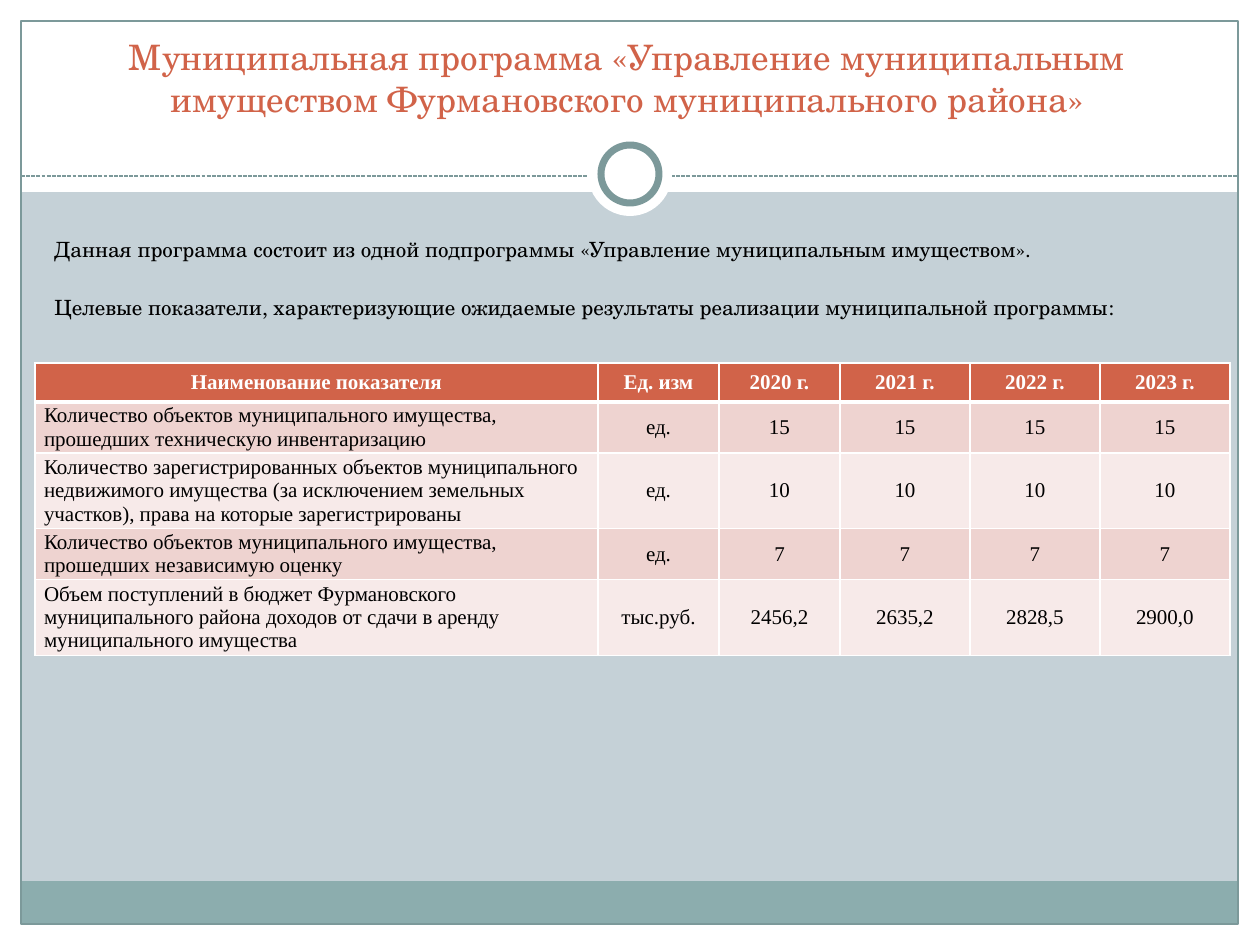
from dataclasses import dataclass

from lxml import etree
from pptx import Presentation
from pptx import util as u
from pptx.dml.color import RGBColor
from pptx.enum import dml, shapes, text
from pptx.oxml import ns

SCALE = 914400 / 126
WIDE, HIGH = 1260, 945
HUES = {
    "back": "C5D1D7",
    "white": "FFFFFF",
    "black": "000000",
    "foot": "8CADAE",
    "edge": "7C999A",
    "rust": "D16349",
    "rose": "EED3D0",
    "pale": "F7EAE9",
}
SCHOOL = "TeX Gyre Schola"
TIMES = "Times New Roman"
KIND = shapes.MSO_SHAPE


@dataclass
class Box:
    x: int
    y: int
    w: int
    h: int


@dataclass
class Form:
    kind: shapes.MSO_SHAPE
    box: Box
    fill: str = ""
    line: float = 0


@dataclass
class Font:
    name: str
    size: int
    hue: str
    bold: bool = False


FORMS = [
    Form(KIND.RECTANGLE, Box(0, 924, WIDE, 21), "white"),
    Form(KIND.RECTANGLE, Box(0, 0, WIDE, 192), "white"),
    Form(KIND.RECTANGLE, Box(0, 0, 21, HIGH), "white"),
    Form(KIND.RECTANGLE, Box(1239, 0, 21, HIGH), "white"),
    Form(KIND.RECTANGLE, Box(21, 881, 1217, 43), "foot"),
    Form(KIND.RECTANGLE, Box(21, 21, 1217, 903), line=0.75),
]
RINGS = [
    Form(KIND.OVAL, Box(588, 132, 84, 84), "white"),
    Form(KIND.OVAL, Box(601, 145, 58, 58), "white", 4),
]
TITLE = "Муниципальная программа «Управление муниципальным имуществом Фурмановского муниципального района»"
NOTES = [
    "Данная программа состоит из одной подпрограммы «Управление муниципальным имуществом».",
    "Целевые показатели, характеризующие ожидаемые результаты реализации муниципальной программы:",
]
COLS = [563, 121, 121, 130, 130, 130]
ROWS = [39, 51, 70, 51, 70]
DATA = [
    ["Наименование показателя", "Ед. изм"] + [f"{year} г." for year in range(2020, 2024)],
    ["Количество объектов муниципального имущества, прошедших техническую инвентаризацию", "ед."] + ["15"] * 4,
    ["Количество зарегистрированных объектов муниципального недвижимого имущества "
     "(за исключением земельных участков), права на которые зарегистрированы", "ед."] + ["10"] * 4,
    ["Количество объектов муниципального имущества, прошедших независимую оценку", "ед."] + ["7"] * 4,
    ["Объем поступлений в бюджет Фурмановского муниципального района доходов от сдачи в аренду "
     "муниципального имущества", "тыс.руб.", "2456,2", "2635,2", "2828,5", "2900,0"],
]


def px(val: int) -> u.Emu:
    return u.Emu(round(val * SCALE))


def place(box: Box) -> list[u.Emu]:
    return [px(val) for val in (box.x, box.y, box.w, box.h)]


def hue(key: str) -> RGBColor:
    return RGBColor.from_string(HUES[key])


def paint(fill, key: str) -> None:
    fill.solid()
    fill.fore_color.rgb = hue(key)


def draw(slide, form: Form) -> None:
    shape = slide.shapes.add_shape(form.kind, *place(form.box))
    shape.shadow.inherit = False
    if form.fill:
        paint(shape.fill, form.fill)
    else:
        shape.fill.background()
    if form.line:
        shape.line.color.rgb = hue("edge")
        shape.line.width = u.Pt(form.line)
    else:
        shape.line.fill.background()


def rule(slide, left: int, right: int, y: int) -> None:
    line = slide.shapes.add_connector(
        shapes.MSO_CONNECTOR.STRAIGHT, px(left), px(y), px(right), px(y))
    line.line.color.rgb = hue("edge")
    line.line.width = u.Pt(0.75)
    line.line.dash_style = dml.MSO_LINE.SQUARE_DOT
    etree.SubElement(line._element.spPr, ns.qn("a:effectLst"))


def write(para, words: str, font: Font, align: text.PP_ALIGN) -> None:
    para.alignment = align
    run = para.add_run()
    run.text = words
    run.font.name = font.name
    run.font.size = u.Pt(font.size)
    run.font.bold = font.bold
    run.font.color.rgb = hue(font.hue)


def frame(slide, box: Box, words: list[str], font: Font, align: text.PP_ALIGN,
          anchor: text.MSO_ANCHOR, top: int = 6, gap: int = 0) -> None:
    body = slide.shapes.add_textbox(*place(box)).text_frame
    body.word_wrap = True
    body.vertical_anchor = anchor
    body.margin_top = px(top)
    for i, part in enumerate(words):
        para = body.add_paragraph() if i else body.paragraphs[0]
        if i:
            para.space_before = u.Pt(gap)
        write(para, part, font, align)


def edge(cell, side: str, width: int) -> None:
    line = etree.SubElement(cell._tc.get_or_add_tcPr(), ns.qn(f"a:ln{side}"), w=str(u.Pt(width)))
    fill = etree.SubElement(line, ns.qn("a:solidFill"))
    etree.SubElement(fill, ns.qn("a:srgbClr"), val=HUES["white"])


def grid(slide, x: int, y: int) -> None:
    table = slide.shapes.add_table(
        len(ROWS), len(COLS), *place(Box(x, y, sum(COLS), sum(ROWS)))).table
    for col, wide in zip(table.columns, COLS):
        col.width = px(wide)
    for r, (row, high) in enumerate(zip(table.rows, ROWS)):
        row.height = px(high)
        font = Font(TIMES, 12, "black" if r else "white", not r)
        shade = ("pale", "rose")[r % 2] if r else "rust"
        for c, cell in enumerate(row.cells):
            for side in "LRTB":
                thick = (r == 0 and side == "B") or (r == 1 and side == "T")
                edge(cell, side, 3 if thick else 1)
            paint(cell.fill, shade)
            cell.margin_left = cell.margin_right = px(9)
            cell.margin_top = cell.margin_bottom = 0
            cell.vertical_anchor = text.MSO_ANCHOR.MIDDLE
            align = text.PP_ALIGN.LEFT if r and not c else text.PP_ALIGN.CENTER
            write(cell.text_frame.paragraphs[0], DATA[r][c], font, align)


def main() -> None:
    deck = Presentation()
    deck.slide_width, deck.slide_height = px(WIDE), px(HIGH)
    slide = deck.slides.add_slide(deck.slide_layouts[6])
    paint(slide.background.fill, "back")
    for form in FORMS:
        draw(slide, form)
    rule(slide, 21, 1239, 176)
    for ring in RINGS:
        draw(slide, ring)
    frame(slide, Box(39, 59, 1176, 67), [TITLE], Font(SCHOOL, 20, "rust"),
          text.PP_ALIGN.CENTER, text.MSO_ANCHOR.BOTTOM)
    frame(slide, Box(42, 200, 1172, 84), NOTES, Font(SCHOOL, 12, "black"),
          text.PP_ALIGN.LEFT, text.MSO_ANCHOR.TOP, top=36, gap=19)
    grid(slide, 35, 363)
    deck.save("out.pptx")


if __name__ == "__main__":
    main()
